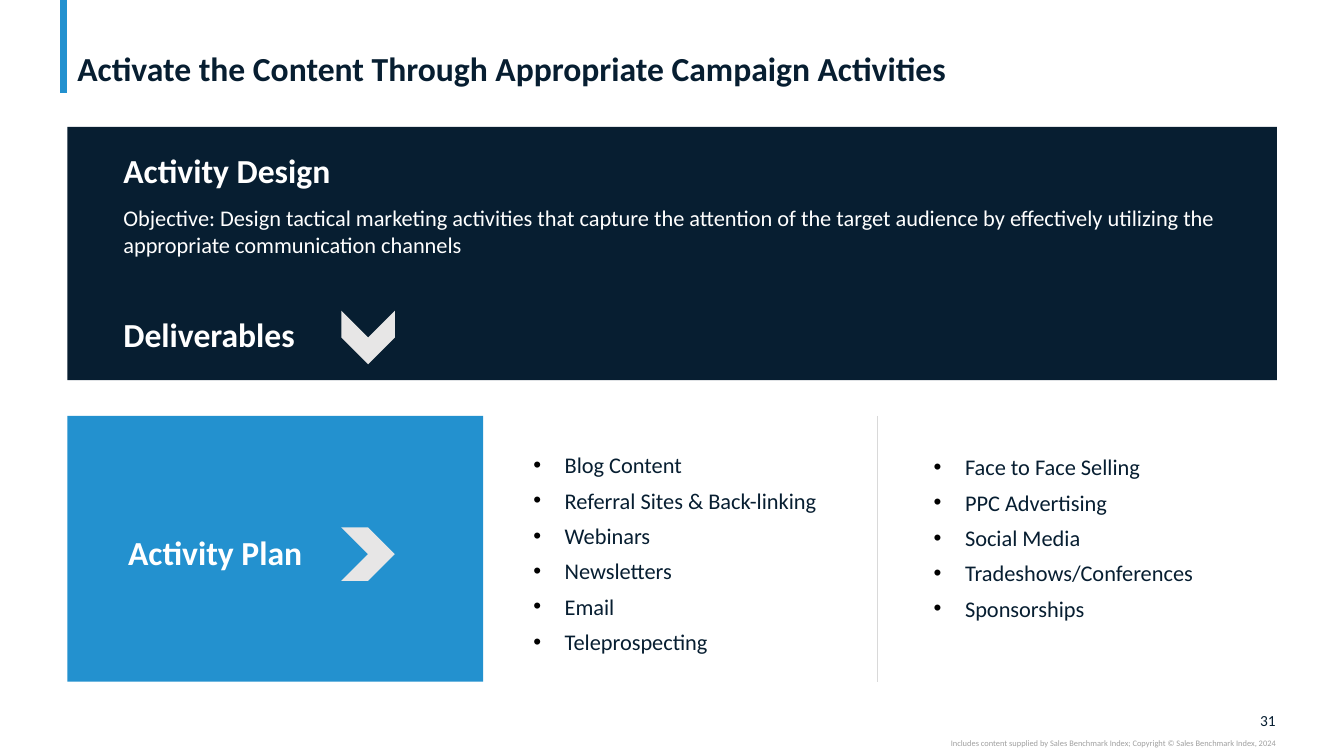
from lxml.etree import SubElement
from pptx import Presentation
from pptx.dml.color import RGBColor
from pptx.enum.shapes import MSO_CONNECTOR, MSO_SHAPE
from pptx.enum.text import MSO_ANCHOR, MSO_AUTO_SIZE, PP_ALIGN
from pptx.oxml.ns import qn
from pptx.util import Cm, Pt

# Content
TITLE = "Activate the Content Through Appropriate Campaign Activities"
# Each line: text, size, bold, space before
DESIGN = [
    ("Activity Design", 24, True, 0),
    ("Objective: Design tactical marketing activities that capture the attention of the "
     "target audience by effectively utilizing the appropriate communication channels",
     16, False, 10),
    ("Deliverables", 24, True, 39.5),
]
PLAN = [("Activity Plan", 24, True, 0)]
CHANNELS = [
    ["Blog Content", "Referral Sites & Back-linking", "Webinars",
     "Newsletters", "Email", "Teleprospecting"],
    ["Face to Face Selling", "PPC Advertising", "Social Media",
     "Tradeshows/Conferences", "Sponsorships"],
]
PAGE_NUMBER = [("31", 11, False, 0)]
COPYRIGHT = [("Includes content supplied by Sales Benchmark Index; "
              "Copyright © Sales Benchmark Index, 2024", 6, False, 0)]

FONT = "Calibri"
NAVY, BLUE, WHITE = "071E31", "2391CF", "FFFFFF"
ARROW, RULE, MUTED = "E7E6E6", "D9D9D9", "A0A0A0"

# Layout in centimetres
LEFT, WIDTH = 1.7, 30.48
RIGHT = LEFT + WIDTH - 0.03
DESIGN_TOP, DESIGN_HEIGHT = 3.2, 6.38
PLAN_TOP, PLAN_WIDTH, PLAN_HEIGHT = 10.48, 10.48, 6.7
ARROW_LEFT, ARROW_SIZE = 8.6, 1.35
DIVIDER_X = 22.12
LIST_BOXES = [(13.44, 11.38, 8.69, 5.18), (23.53, 11.43, 8.69, 4.27)]
INDENT = 0.79


def color(hex_value):
    return RGBColor.from_string(hex_value)


def style(paragraph, size, hex_value, bold=False):
    paragraph.font.name = FONT
    paragraph.font.size = Pt(size)
    paragraph.font.bold = bold
    paragraph.font.color.rgb = color(hex_value)


def place(shape, left, top, width, height):
    shape.left, shape.top, shape.width, shape.height = map(Cm, (left, top, width, height))


def set_frame(frame, anchor, side_inset=0):
    frame.word_wrap = True
    frame.auto_size = MSO_AUTO_SIZE.NONE
    frame.vertical_anchor = anchor
    frame.margin_left = frame.margin_right = Cm(side_inset)
    frame.margin_top = frame.margin_bottom = 0


def add_block(kind, box, fill):
    block = slide.shapes.add_shape(kind, *map(Cm, box))
    block.shadow.inherit = False
    block.fill.solid()
    block.fill.fore_color.rgb = color(fill)
    block.line.fill.background()
    return block


def add_rule(x, top, bottom, hex_value, weight):
    rule = slide.shapes.add_connector(MSO_CONNECTOR.STRAIGHT, *map(Cm, (x, top, x, bottom)))
    rule.line.color.rgb = color(hex_value)
    rule.line.width = Pt(weight)
    SubElement(rule._element.spPr, qn("a:effectLst"))


def add_text(lines, box, hex_value, anchor=MSO_ANCHOR.MIDDLE, align=PP_ALIGN.LEFT):
    frame = slide.shapes.add_textbox(*map(Cm, box)).text_frame
    set_frame(frame, anchor)
    for i, (text, size, bold, before) in enumerate(lines):
        paragraph = frame.add_paragraph() if i else frame.paragraphs[0]
        paragraph.text = text
        paragraph.alignment = align
        if before:
            paragraph.space_before = Pt(before)
        style(paragraph, size, hex_value, bold)


def add_bullet(paragraph):
    props = paragraph._p.get_or_add_pPr()
    props.set("marL", str(Cm(INDENT)))
    props.set("indent", str(-Cm(INDENT)))
    SubElement(SubElement(props, qn("a:buClr")), qn("a:srgbClr"), val="000000")
    SubElement(props, qn("a:buFont"), typeface="Arial")
    SubElement(props, qn("a:buChar"), char="•")


prs = Presentation()
prs.slide_width, prs.slide_height = Cm(33.87), Cm(19.05)
slide = prs.slides.add_slide(prs.slide_layouts.get_by_name("Two Content"))
title, *channel_lists = slide.placeholders

# Title with accent bar
add_rule(1.6, 0, 2.34, BLUE, 5)
place(title, LEFT, 0.1, WIDTH, 2.13)
set_frame(title.text_frame, MSO_ANCHOR.BOTTOM, 0.25)
title.text_frame.text = TITLE
heading = title.text_frame.paragraphs[0]
heading.alignment = PP_ALIGN.LEFT
heading.line_spacing = 0.9
style(heading, 24, NAVY, True)

# Activity design panel
add_block(MSO_SHAPE.RECTANGLE, (LEFT, DESIGN_TOP, WIDTH, DESIGN_HEIGHT), NAVY)
add_text(DESIGN, (3.11, 3.76, 27.66, 5.18), WHITE)
down_arrow = add_block(MSO_SHAPE.CHEVRON, (ARROW_LEFT, 7.83, ARROW_SIZE, ARROW_SIZE), ARROW)
down_arrow.rotation = 90

# Activity plan panel
add_block(MSO_SHAPE.RECTANGLE, (LEFT, PLAN_TOP, PLAN_WIDTH, PLAN_HEIGHT), BLUE)
add_text(PLAN, (3.23, 13.4, 5.3, 1.02), WHITE)
add_block(MSO_SHAPE.CHEVRON, (ARROW_LEFT, 13.29, ARROW_SIZE, ARROW_SIZE), ARROW)

# Channel lists
add_rule(DIVIDER_X, PLAN_TOP, PLAN_TOP + PLAN_HEIGHT, RULE, 0.5)
for channel_list, channels, box in zip(channel_lists, CHANNELS, LIST_BOXES):
    place(channel_list, *box)
    frame = channel_list.text_frame
    set_frame(frame, MSO_ANCHOR.TOP)
    frame.text = "\n".join(channels)
    for channel in frame.paragraphs:
        add_bullet(channel)
        channel.space_before, channel.space_after = Pt(0), Pt(6)
        style(channel, 16, NAVY)

# Footer
add_text(PAGE_NUMBER, (RIGHT - 0.84, 17.91, 0.84, 0.48), NAVY, align=PP_ALIGN.RIGHT)
add_text(COPYRIGHT, (RIGHT - 13.1, 18.59, 13.1, 0.25), MUTED, MSO_ANCHOR.TOP, PP_ALIGN.RIGHT)

prs.save("out.pptx")
